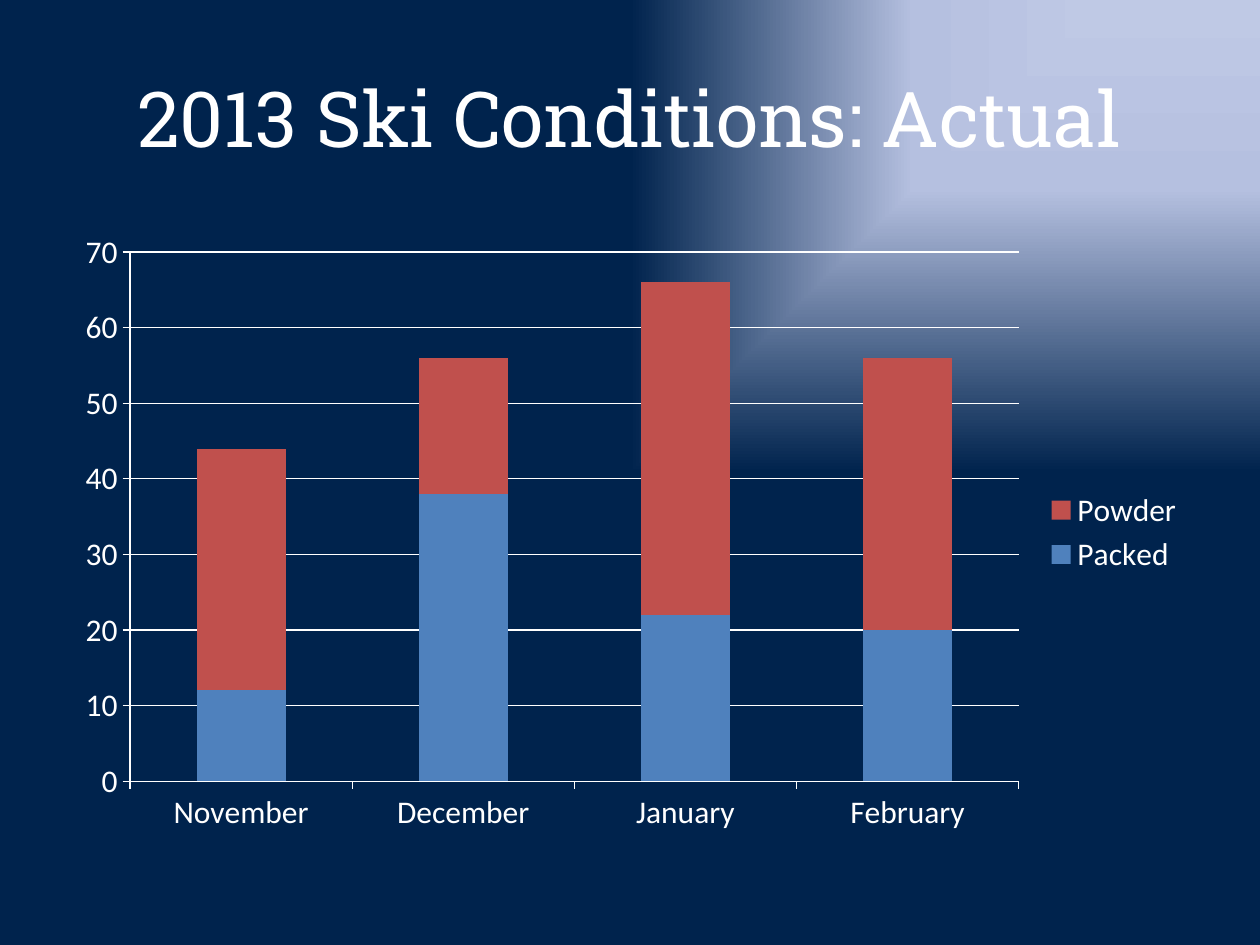
from pptx import Presentation
from pptx.chart.data import CategoryChartData
from pptx.dml.color import RGBColor
from pptx.enum.chart import XL_CHART_TYPE, XL_LEGEND_POSITION, XL_TICK_MARK
from pptx.enum.text import MSO_ANCHOR, PP_ALIGN
from pptx.oxml import parse_xml
from pptx.oxml.ns import nsdecls, qn
from pptx.util import Inches, Pt

COLORS = {
    "white": "FFFFFF",
    "glow": "BFC9E5",
    "haze": "B5C0E0",
    "night": "00234D",
    "packed": "4F81BD",
    "powder": "C0504D",
}
MONTHS = ["November", "December", "January", "February"]
SNOW = {"Packed": (12, 38, 22, 20), "Powder": (32, 18, 44, 36)}


def rgb(name):
    return RGBColor.from_string(COLORS[name])


def set_background(s, stops):
    """Rectangular gradient that spreads from the top right corner."""
    s.background.fill.gradient()
    grad = s.element.find(".//" + qn("a:gradFill"))
    gs = "".join(
        f'<a:gs pos="{pos * 1000}"><a:srgbClr val="{COLORS[name]}"/></a:gs>'
        for pos, name in stops
    )
    grad.getparent().replace(grad, parse_xml(
        f'<a:gradFill {nsdecls("a")} rotWithShape="1"><a:gsLst>{gs}</a:gsLst>'
        '<a:path path="rect"><a:fillToRect l="100000" b="100000"/></a:path>'
        '</a:gradFill>'
    ))


def add_text(s, text, left, top, width, height, *, font, size, color,
             align=PP_ALIGN.LEFT, anchor=MSO_ANCHOR.TOP):
    sp = s.shapes.add_textbox(Inches(left), Inches(top), Inches(width), Inches(height))
    tf = sp.text_frame
    tf.word_wrap = True
    tf.vertical_anchor = anchor
    p = tf.paragraphs[0]
    p.alignment = align
    r = p.add_run()
    r.text = text
    r.font.name = font
    r.font.size = Pt(size)
    r.font.color.rgb = rgb(color)
    return sp


def style_line(line, color, width=0.75):
    line.color.rgb = rgb(color)
    line.width = Pt(width)


def add_stacked_chart(s, left, top, width, height):
    data = CategoryChartData()
    data.categories = MONTHS
    for name, values in SNOW.items():
        data.add_series(name, values)
    chart = s.shapes.add_chart(
        XL_CHART_TYPE.COLUMN_STACKED, Inches(left), Inches(top),
        Inches(width), Inches(height), data).chart
    chart.has_title = False
    chart.font.name = "Calibri"
    chart.font.size = Pt(18)
    chart.font.color.rgb = rgb("white")

    # Columns
    plot = chart.plots[0]
    plot.vary_by_categories = False
    plot.gap_width = 150
    plot.overlap = 100
    for series in plot.series:
        series.format.fill.solid()
        series.format.fill.fore_color.rgb = rgb(series.name.lower())

    # Axes and gridlines
    for axis in (chart.category_axis, chart.value_axis):
        axis.major_tick_mark = XL_TICK_MARK.OUTSIDE
        axis.minor_tick_mark = XL_TICK_MARK.NONE
        style_line(axis.format.line, "white")
    chart.value_axis.has_major_gridlines = True
    style_line(chart.value_axis.major_gridlines.format.line, "white")

    # Legend
    chart.has_legend = True
    chart.legend.position = XL_LEGEND_POSITION.RIGHT
    chart.legend.include_in_layout = False


def main():
    prs = Presentation()
    prs.slide_width = Inches(10)
    prs.slide_height = Inches(7.5)
    s = prs.slides.add_slide(prs.slide_layouts[6])
    set_background(s, [(0, "glow"), (40, "haze"), (100, "night")])
    add_text(s, "2013 Ski Conditions: Actual", 0.5, 0.3, 9, 1.25,
             font="Roboto Slab", size=44, color="white",
             align=PP_ALIGN.CENTER, anchor=MSO_ANCHOR.MIDDLE)
    add_stacked_chart(s, 0.5, 1.75, 9, 4.95)
    prs.save("out.pptx")


if __name__ == "__main__":
    main()
